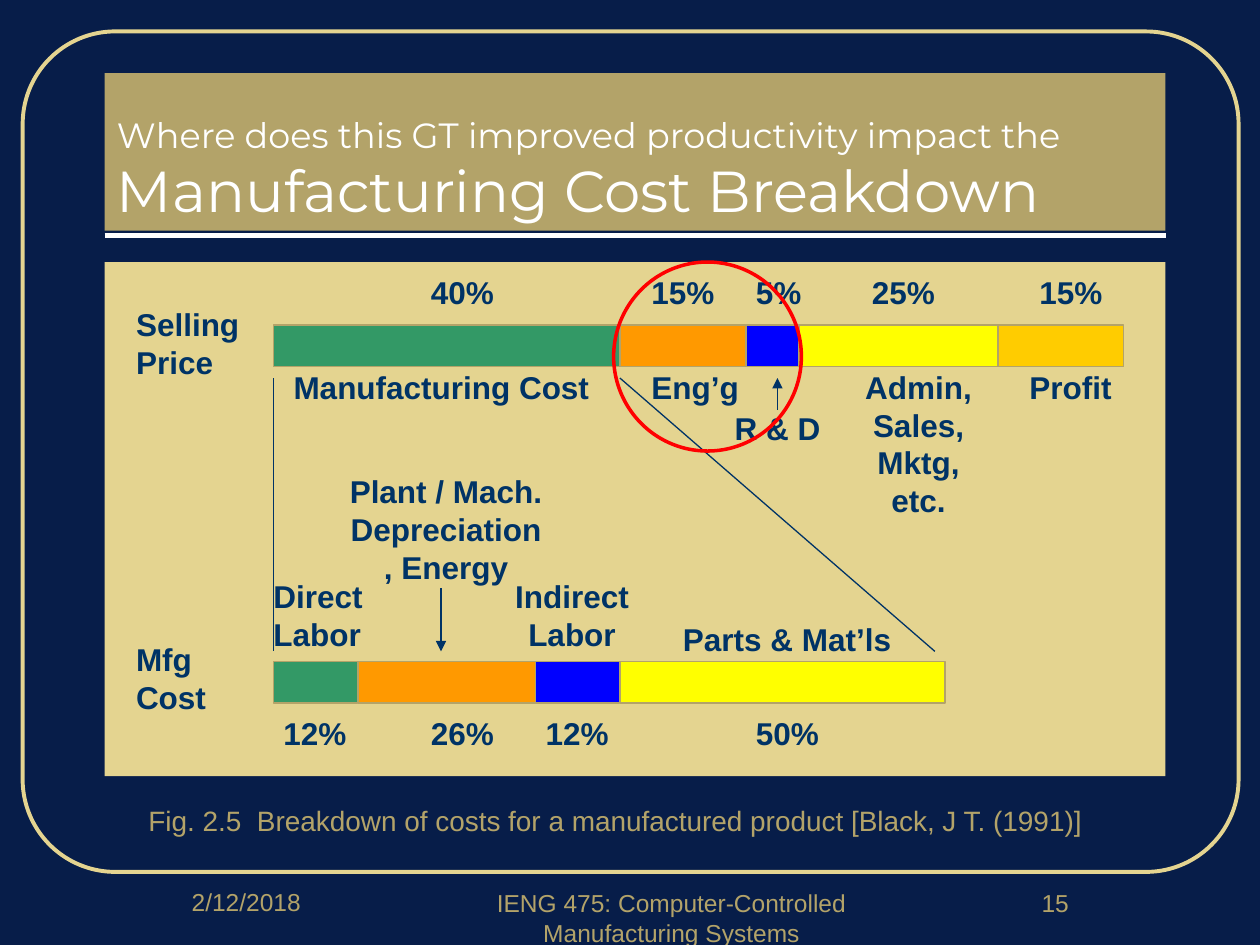
"""Build the manufacturing cost breakdown slide."""
from lxml.etree import SubElement
from pptx import Presentation
from pptx.dml.color import RGBColor
from pptx.enum.shapes import MSO_CONNECTOR, MSO_SHAPE
from pptx.enum.text import MSO_ANCHOR, PP_ALIGN
from pptx.oxml.ns import qn
from pptx.util import Inches, Pt

NIGHT = RGBColor(0x07, 0x1D, 0x49)
GOLD = RGBColor(0xB3, 0xA3, 0x69)
SAND = RGBColor(0xE4, 0xD4, 0x90)
WHITE = RGBColor(0xFF, 0xFF, 0xFF)
NAVY = RGBColor(0x00, 0x33, 0x66)
GREEN = RGBColor(0x33, 0x99, 0x66)
ORANGE = RGBColor(0xFF, 0x99, 0x00)
BLUE = RGBColor(0x00, 0x00, 0xFF)
YELLOW = RGBColor(0xFF, 0xFF, 0x00)
AMBER = RGBColor(0xFF, 0xCC, 0x00)
RED = RGBColor(0xFF, 0x00, 0x00)

TITLE = [
    ("Where does this GT improved productivity impact the", 20),
    ("Manufacturing Cost Breakdown", 33),
]
CAPTION = "Fig. 2.5  Breakdown of costs for a manufactured product [Black, J T. (1991)]"
FOOTERS = [
    ("2/12/2018", 0.83, 6.99, 2.25),
    ("IENG 475: Computer-Controlled Manufacturing Systems", 3.58, 7, 3.5),
    ("15", 7.5, 7, 1.75),
]

BAR_LEFT, BAR_HEIGHT = 2.17, 0.33
BARS = [
    (2.58, [(2.75, GREEN), (1, ORANGE), (0.42, BLUE), (1.58, YELLOW), (1, AMBER)]),
    (5.25, [(0.67, GREEN), (1.41, ORANGE), (0.67, BLUE), (2.58, YELLOW)]),
]
PERCENTS = [
    (2.17, [("40%", 3.42), ("15%", 5.17), ("5%", 6), ("25%", 6.92), ("15%", 8.25)]),
    (5.67, [("12%", 2.25), ("26%", 3.42), ("12%", 4.33), ("50%", 6)]),
]
LABELS = [
    ("Selling Price", 1.08, 2.42, 0.92, 0.6, PP_ALIGN.LEFT),
    ("Manufacturing Cost", 2.33, 2.92, 2.42, 0.3, PP_ALIGN.LEFT),
    ("Eng’g", 5.17, 2.92, 0.75, 0.3, PP_ALIGN.LEFT),
    ("R & D", 5.83, 3.25, 0.75, 0.3, PP_ALIGN.LEFT),
    ("Admin, Sales, Mktg, etc.", 6.83, 2.92, 0.92, 1.2, PP_ALIGN.CENTER),
    ("Profit", 8.17, 2.92, 0.75, 0.3, PP_ALIGN.LEFT),
    ("Mfg Cost", 1.08, 5.08, 0.83, 0.6, PP_ALIGN.LEFT),
    ("Direct Labor", 2.17, 4.58, 0.92, 0.6, PP_ALIGN.LEFT),
    ("Plant / Mach. Depreciation, Energy", 2.75, 3.75, 1.58, 0.9, PP_ALIGN.CENTER),
    ("Indirect Labor", 4.08, 4.58, 0.92, 0.6, PP_ALIGN.CENTER),
    ("Parts & Mat’ls", 5.42, 4.92, 1.67, 0.3, PP_ALIGN.LEFT),
]
POINTERS = [
    (2.17, 3, 2.17, 5.17, False),
    (4.92, 3, 7.42, 5.17, False),
    (3.5, 4.67, 3.5, 5.17, True),
    (6.17, 3.25, 6.17, 3, True),
]


def add_block(slide, kind, left, top, width, height, fill=None, line=None, weight=0.75):
    block = slide.shapes.add_shape(
        kind, Inches(left), Inches(top), Inches(width), Inches(height))
    block.shadow.inherit = False
    for part, color in ((block.fill, fill), (block.line.fill, line)):
        if color is None:
            part.background()
        else:
            part.solid()
            part.fore_color.rgb = color
    if line is not None:
        block.line.width = Pt(weight)
    return block


def add_line(slide, x1, y1, x2, y2, color=NAVY, weight=0.75, arrow=False):
    connector = slide.shapes.add_connector(
        MSO_CONNECTOR.STRAIGHT, Inches(x1), Inches(y1), Inches(x2), Inches(y2))
    connector.line.color.rgb = color
    connector.line.width = Pt(weight)
    if arrow:
        SubElement(connector.line._get_or_add_ln(), qn("a:tailEnd"), type="triangle")
    SubElement(connector._element.spPr, qn("a:effectLst"))


def write(frame, lines, font="Arial", color=NAVY, bold=False, align=PP_ALIGN.LEFT,
          anchor=MSO_ANCHOR.TOP, inset=None):
    frame.word_wrap = True
    frame.vertical_anchor = anchor
    if inset is not None:
        frame.margin_left = frame.margin_right = Inches(inset)
        frame.margin_top = frame.margin_bottom = Inches(inset)
    for index, (text, size) in enumerate(lines):
        paragraph = frame.add_paragraph() if index else frame.paragraphs[0]
        paragraph.alignment = align
        run = paragraph.add_run()
        run.text = text
        run.font.name = font
        run.font.size = Pt(size)
        run.font.bold = bold
        run.font.color.rgb = color


def add_text(slide, text, left, top, width, height, size=18, **style):
    box = slide.shapes.add_textbox(
        Inches(left), Inches(top), Inches(width), Inches(height))
    write(box.text_frame, [(text, size)], **style)


def main():
    deck = Presentation()
    deck.slide_width, deck.slide_height = Inches(10), Inches(7.5)
    slide = deck.slides.add_slide(deck.slide_layouts[6])
    slide.background.fill.solid()
    slide.background.fill.fore_color.rgb = NIGHT

    border = add_block(slide, MSO_SHAPE.ROUNDED_RECTANGLE, 0.18, 0.25, 9.65, 6.67,
                       line=SAND, weight=2.25)
    border.adjustments[0] = 0.11
    add_line(slide, 0.83, 1.87, 9.25, 1.87, color=WHITE, weight=3)
    for text, left, top, width in FOOTERS:
        add_text(slide, text, left, top, width, 0.5, size=14, color=GOLD,
                 align=PP_ALIGN.CENTER)

    add_block(slide, MSO_SHAPE.RECTANGLE, 0.83, 2.08, 8.42, 4.08, fill=SAND)
    banner = add_block(slide, MSO_SHAPE.RECTANGLE, 0.83, 0.58, 8.42, 1.25, fill=GOLD)
    write(banner.text_frame, TITLE, font="Montserrat", color=WHITE,
          anchor=MSO_ANCHOR.BOTTOM)
    add_text(slide, CAPTION, 1.08, 6.33, 8.08, 0.37, size=16, color=GOLD)

    for top, segments in BARS:
        left = BAR_LEFT
        for width, color in segments:
            add_block(slide, MSO_SHAPE.RECTANGLE, left, top, width, BAR_HEIGHT,
                      fill=color, line=GOLD)
            left += width
    for top, percents in PERCENTS:
        for text, left in percents:
            add_text(slide, text, left, top, 0.5, 0.3, bold=True, inset=0)
    for *label, align in LABELS:
        add_text(slide, *label, bold=True, inset=0, align=align)
    for *ends, arrow in POINTERS:
        add_line(slide, *ends, arrow=arrow)
    add_block(slide, MSO_SHAPE.OVAL, 4.87, 2.08, 1.49, 1.5, line=RED, weight=2)

    deck.save("out.pptx")


if __name__ == "__main__":
    main()
